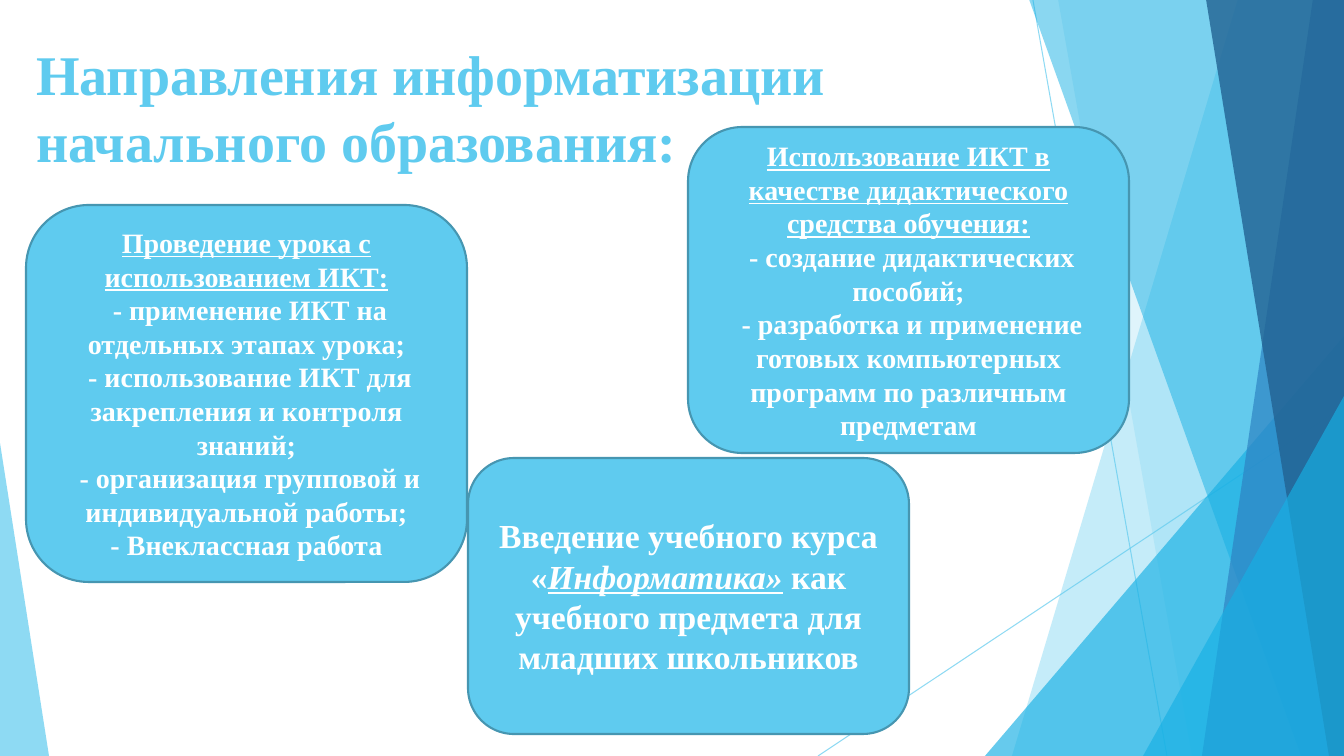
from lxml.etree import SubElement
from pptx import Presentation
from pptx.dml.color import RGBColor
from pptx.enum.shapes import MSO_CONNECTOR, MSO_SHAPE
from pptx.enum.text import MSO_ANCHOR, MSO_AUTO_SIZE, PP_ALIGN
from pptx.oxml.ns import qn
from pptx.util import Pt

WIDE, HIGH = 1344, 756
UNIT = 12192000 / WIDE
FONT = "Times New Roman"
COLORS = {
    "sky": "5FCBEF",
    "cyan": "17B0E4",
    "blue": "2E83C3",
    "navy": "226292",
    "edge": "4696B1",
    "white": "FFFFFF",
}


def px(*sizes):
    """Turn pixel lengths into EMU."""
    return [round(size * UNIT) for size in sizes]


def paint(fill, name, shape=None, alpha=100):
    """Fill with a named colour; alpha is the opacity of the shape in percent."""
    fill.solid()
    fill.fore_color.rgb = RGBColor.from_string(COLORS[name])
    if alpha < 100:
        for color in shape.element.iter(qn("a:srgbClr")):
            SubElement(color, qn("a:alpha"), val=str(alpha * 1000))


deck = Presentation()
deck.slide_width, deck.slide_height = px(WIDE, HIGH)
slide = deck.slides.add_slide(deck.slide_layouts[5])
shapes = slide.shapes

# Title
title = shapes.title
title.left, title.top, title.width, title.height = px(26, 34, 948, 145)
frame = title.text_frame
frame.text = "Направления информатизации начального образования:"
frame.word_wrap = True
frame.auto_size = MSO_AUTO_SIZE.NONE
frame.vertical_anchor = MSO_ANCHOR.MIDDLE
head = frame.paragraphs[0]
head.alignment = PP_ALIGN.LEFT
head.font.name, head.font.size, head.font.bold = FONT, Pt(40), True
head.font.color.rgb = RGBColor.from_string(COLORS["sky"])

# Thin rays
for ends in [(1033, 0, 1167, HIGH), (WIDE, 406, 818, HIGH)]:
    ray = shapes.add_connector(MSO_CONNECTOR.STRAIGHT, *px(*ends))
    ray.line.width = Pt(0.75)
    paint(ray.line.fill, "sky", ray, 70)
    SubElement(ray.element.spPr, qn("a:effectLst"))

# Bands reach the right edge: colour, opacity, (left x at top, left x at bottom)
# Wedges stand on the bottom edge: colour, opacity, (left, top, width, apex)
facets = [
    ("sky", 36, (1238, 1012)),
    ("sky", 20, (1058, 1192)),
    ("cyan", 66, (985, 336, 359, 1)),
    ("cyan", 50, (1029, 1301)),
    ("blue", 70, (1313, 1202)),
    ("navy", 80, (1206, 1329)),
    ("cyan", 66, (1143, 396, 201, 1)),
    ("sky", 70, (0, 443, 49, 0)),
]
for color, alpha, place in facets:
    if len(place) == 2:
        upper, lower = place
        path = shapes.build_freeform(*px(upper, -1), scale=1.0)
        path.add_line_segments(
            [px(WIDE, -1), px(WIDE, HIGH), px(lower, HIGH)], close=True)
        facet = path.convert_to_shape()
    else:
        left, top, width, apex = place
        facet = shapes.add_shape(
            MSO_SHAPE.ISOSCELES_TRIANGLE, *px(left, top, width, HIGH - top))
        facet.adjustments[0] = apex
    facet.shadow.inherit = False
    facet.line.fill.background()
    paint(facet.fill, color, facet, alpha)

# Cards: left, top, height, text size, paragraphs of (text, underlined, italic) runs
cards = [
    (26, 205, 377, 20, [
        [("Проведение урока с использованием ИКТ:", True, False)],
        [(" - применение ИКТ на отдельных этапах урока;", False, False)],
        [(" - использование ИКТ для закрепления и контроля знаний;", False, False)],
        [(" - организация групповой и индивидуальной работы;", False, False)],
        [("- Внеклассная работа", False, False)],
    ]),
    (468, 458, 276, 24, [
        [("Введение учебного курса «", False, False),
         ("Информатика»", True, True),
         (" как учебного предмета для младших школьников", False, False)],
    ]),
    (688, 127, 326, 20, [
        [("Использование ИКТ в качестве дидактического средства обучения:", True, False)],
        [(" - создание дидактических пособий;", False, False)],
        [(" - разработка и применение готовых компьютерных программ"
          " по различным предметам", False, False)],
    ]),
]
for left, top, height, size, lines in cards:
    card = shapes.add_shape(
        MSO_SHAPE.ROUNDED_RECTANGLE, *px(left, top, 441, height))
    card.shadow.inherit = False
    paint(card.fill, "sky")
    paint(card.line.fill, "edge")
    card.line.width = Pt(1.5)
    frame = card.text_frame
    frame.word_wrap = True
    frame.vertical_anchor = MSO_ANCHOR.MIDDLE
    for row, parts in enumerate(lines):
        para = frame.add_paragraph() if row else frame.paragraphs[0]
        para.alignment = PP_ALIGN.CENTER
        para.font.name, para.font.size, para.font.bold = FONT, Pt(size), True
        para.font.color.rgb = RGBColor.from_string(COLORS["white"])
        for text, under, slant in parts:
            run = para.add_run()
            run.text = text
            run.font.underline, run.font.italic = under, slant

deck.save("out.pptx")
